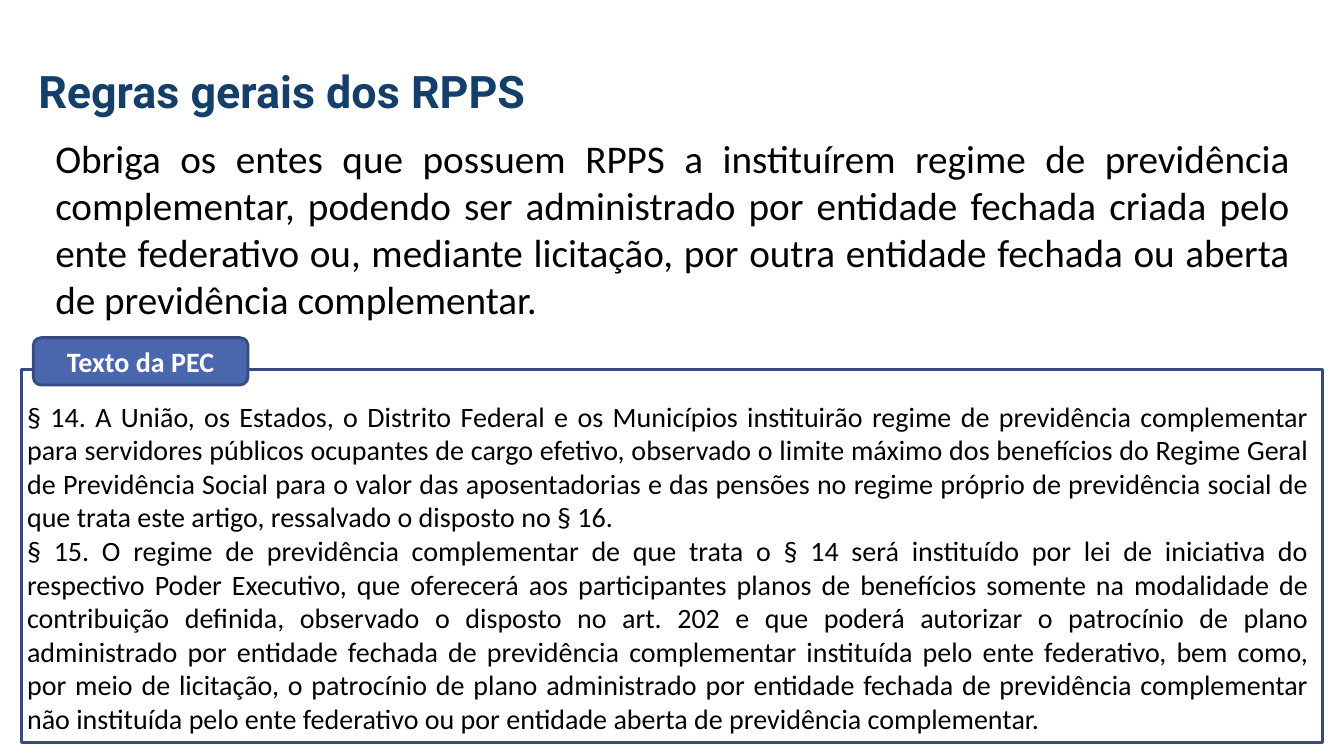
from dataclasses import dataclass

from pptx import Presentation
from pptx.dml.color import RGBColor
from pptx.enum import shapes, text
from pptx.util import Inches, Pt


@dataclass(frozen=True)
class Theme:
    title_color: RGBColor = RGBColor(0x14, 0x3F, 0x6A)
    ink: RGBColor = RGBColor(0, 0, 0)
    white: RGBColor = RGBColor(0xFF, 0xFF, 0xFF)
    accent: RGBColor = RGBColor(0x4A, 0x66, 0xAC)
    outline: RGBColor = RGBColor(0x37, 0x4B, 0x7F)
    title_font: str = "Roboto"
    body_font: str = "Calibri"
    title_size: int = 32
    summary_size: int = 28
    law_size: int = 20
    line_width: int = 2


@dataclass(frozen=True)
class Box:
    left: float
    top: float
    width: float
    height: float

    def lengths(self) -> tuple:
        return tuple(map(Inches, (self.left, self.top, self.width, self.height)))


THEME = Theme()

SUMMARY = (
    "Obriga os entes que possuem RPPS a instituírem regime de previdência complementar, "
    "podendo ser administrado por entidade fechada criada pelo ente federativo ou, mediante "
    "licitação, por outra entidade fechada ou aberta de previdência complementar."
)
LAW_PARAGRAPHS = (
    "§ 14. A União, os Estados, o Distrito Federal e os Municípios instituirão regime de "
    "previdência complementar para servidores públicos ocupantes de cargo efetivo, observado "
    "o limite máximo dos benefícios do Regime Geral de Previdência Social para o valor das "
    "aposentadorias e das pensões no regime próprio de previdência social de que trata este "
    "artigo, ressalvado o disposto no § 16.",
    "§ 15. O regime de previdência complementar de que trata o § 14 será instituído por lei "
    "de iniciativa do respectivo Poder Executivo, que oferecerá aos participantes planos de "
    "benefícios somente na modalidade de contribuição definida, observado o disposto no "
    "art. 202 e que poderá autorizar o patrocínio de plano administrado por entidade fechada "
    "de previdência complementar instituída pelo ente federativo, bem como, por meio de "
    "licitação, o patrocínio de plano administrado por entidade fechada de previdência "
    "complementar não instituída pelo ente federativo ou por entidade aberta de previdência "
    "complementar.",
)


def write(shape, *paragraphs: str, size: int, font: str = THEME.body_font,
          color: RGBColor = THEME.ink, bold: bool = False,
          align=text.PP_ALIGN.JUSTIFY, anchor=text.MSO_ANCHOR.TOP) -> None:
    """Fill a shape with formatted paragraphs."""
    frame = shape.text_frame
    frame.word_wrap = True
    frame.auto_size = text.MSO_AUTO_SIZE.NONE
    frame.vertical_anchor = anchor
    frame.text = "\n".join(paragraphs)
    for paragraph in frame.paragraphs:
        paragraph.alignment = align
        for run in paragraph.runs:
            run.font.name = font
            run.font.size = Pt(size)
            run.font.bold = bold
            run.font.color.rgb = color


def add_panel(slide, kind, box: Box, fill: RGBColor | None = None):
    """Draw an outlined shape, hollow unless a fill is given."""
    panel = slide.shapes.add_shape(kind, *box.lengths())
    panel.shadow.inherit = False
    if fill is None:
        panel.fill.background()
    else:
        panel.fill.solid()
        panel.fill.fore_color.rgb = fill
    panel.line.color.rgb = THEME.outline
    panel.line.width = Pt(THEME.line_width)
    return panel


def main() -> None:
    deck = Presentation()
    deck.slide_width, deck.slide_height = Inches(13.33), Inches(7.5)
    slide = deck.slides.add_slide(deck.slide_layouts[5])

    # Title
    title = slide.shapes.title
    title.left, title.top, title.width, title.height = Box(0.28, 0.58, 8.3, 0.64).lengths()
    write(title, "Regras gerais dos RPPS", size=THEME.title_size, font=THEME.title_font,
          color=THEME.title_color, bold=True, align=text.PP_ALIGN.LEFT)

    # Summary of the rule
    summary = slide.shapes.add_textbox(*Box(0.45, 1.28, 12.44, 1.99).lengths())
    write(summary, SUMMARY, size=THEME.summary_size)

    # Frame with its label
    add_panel(slide, shapes.MSO_SHAPE.RECTANGLE, Box(0.21, 3.67, 12.91, 3.7))
    label = add_panel(slide, shapes.MSO_SHAPE.ROUNDED_RECTANGLE,
                      Box(0.33, 3.35, 2.13, 0.47), THEME.accent)
    write(label, "Texto da PEC", size=THEME.law_size, color=THEME.white, bold=True,
          align=text.PP_ALIGN.CENTER, anchor=text.MSO_ANCHOR.MIDDLE)

    # Text of the amendment
    law = slide.shapes.add_textbox(*Box(0.17, 3.91, 12.91, 3.47).lengths())
    write(law, *LAW_PARAGRAPHS, size=THEME.law_size)

    deck.save("out.pptx")


if __name__ == "__main__":
    main()
